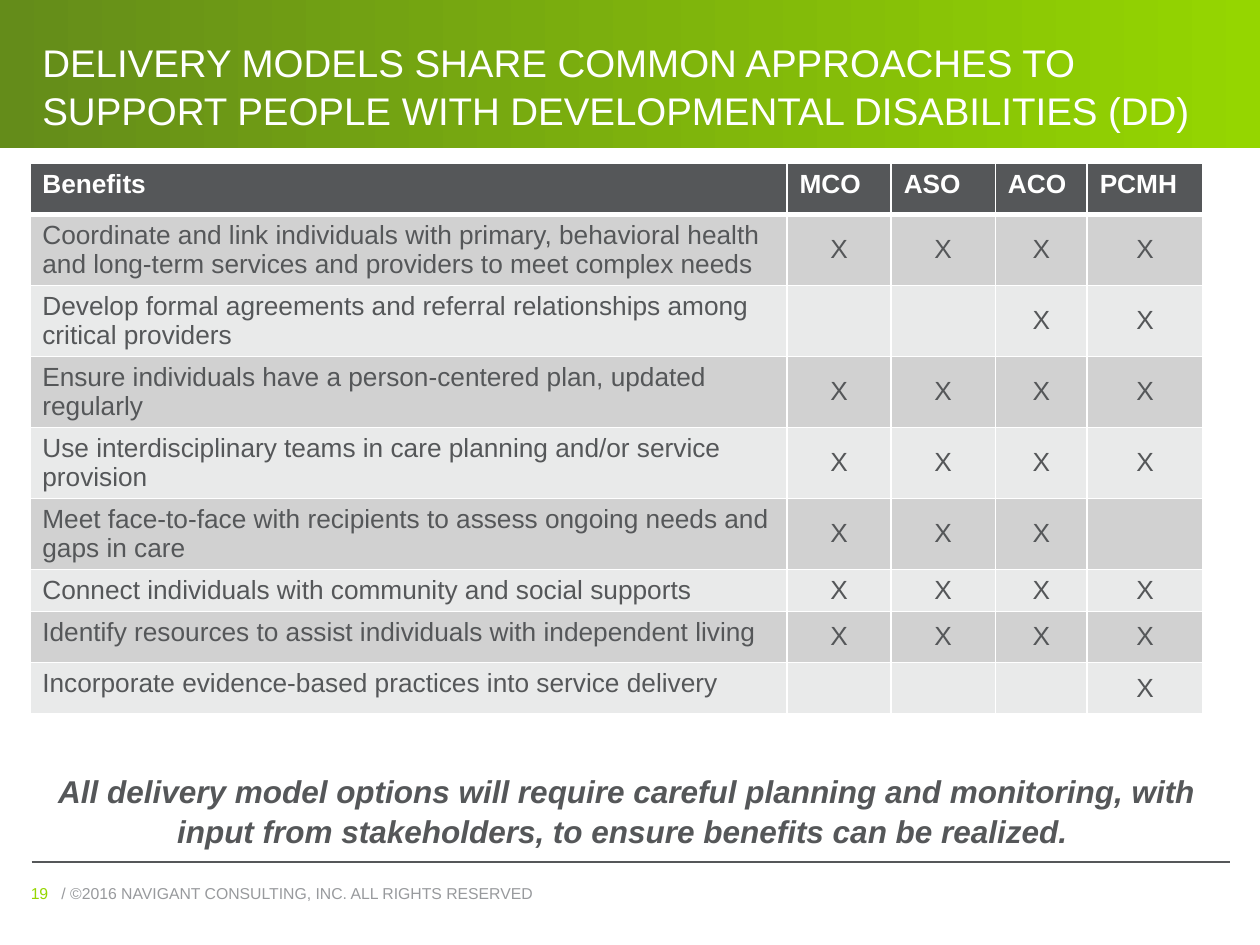
from dataclasses import dataclass

from lxml.etree import SubElement
from pptx import Presentation
from pptx.dml.color import RGBColor
from pptx.enum.shapes import MSO_CONNECTOR, MSO_SHAPE
from pptx.enum.text import MSO_ANCHOR, MSO_AUTO_SIZE, PP_ALIGN
from pptx.oxml.ns import qn
from pptx.util import Pt


@dataclass(frozen=True)
class Theme:
    font: str = "Arial"
    white: str = "FFFFFF"
    ink: str = "555759"
    footer: str = "989A9D"
    green: str = "95D600"
    dark_green: str = "648C1A"
    band_odd: str = "D1D1D1"
    band_even: str = "E9EAEA"
    title_size: int = 22
    statement_size: int = 18
    table_size: int = 15
    footer_size: int = 9


theme = Theme()


def write(paragraph, text, size, color, bold=False, italic=False):
    run = paragraph.add_run()
    run.text = text
    run.font.name = theme.font
    run.font.size = Pt(size)
    run.font.color.rgb = RGBColor.from_string(color)
    run.font.bold = bold
    run.font.italic = italic


def style_cell(cell, fill, bottom=1, top=1):
    """Give a cell white borders, in points, and a solid fill."""
    properties = cell._tc.get_or_add_tcPr()
    for side, width in (("L", 1), ("R", 1), ("T", top), ("B", bottom)):
        border = SubElement(properties, qn(f"a:ln{side}"), w=str(Pt(width)))
        solid = SubElement(border, qn("a:solidFill"))
        SubElement(solid, qn("a:srgbClr"), val=theme.white)
    cell.fill.solid()
    cell.fill.fore_color.rgb = RGBColor.from_string(fill)


presentation = Presentation()
presentation.slide_width, presentation.slide_height = Pt(720), Pt(540)
slide = presentation.slides.add_slide(presentation.slide_layouts[5])
shapes = slide.shapes

# Title on its gradient band
title = shapes.title
band = shapes.add_shape(MSO_SHAPE.RECTANGLE, 0, 0, Pt(720), Pt(84.5))
band.shadow.inherit = False
band.line.fill.background()
band.fill.gradient()
band.fill.gradient_angle = 0
for stop, color in zip(band.fill.gradient_stops, (theme.dark_green, theme.green)):
    stop.color.rgb = RGBColor.from_string(color)
title._element.addprevious(band._element)

title.left, title.top, title.width, title.height = Pt(17), Pt(0), Pt(686), Pt(80)
title.text_frame.auto_size = MSO_AUTO_SIZE.NONE
title.text_frame.vertical_anchor = MSO_ANCHOR.BOTTOM
paragraph = title.text_frame.paragraphs[0]
paragraph.alignment = PP_ALIGN.LEFT
paragraph.line_spacing = 1.05
write(paragraph, "DELIVERY MODELS SHARE COMMON APPROACHES TO SUPPORT PEOPLE WITH "
      "DEVELOPMENTAL DISABILITIES (DD)", theme.title_size, theme.white)

# Benefits by delivery model
models = ["MCO", "ASO", "ACO", "PCMH"]
benefits = [
    ("Coordinate and link individuals with primary, behavioral health and "
     "long-term services and providers to meet complex needs", models, 40.5),
    ("Develop formal agreements and referral relationships among critical providers",
     ["ACO", "PCMH"], 40.5),
    ("Ensure individuals have a person-centered plan, updated regularly", models, 40.5),
    ("Use interdisciplinary teams in care planning and/or service provision", models, 40.5),
    ("Meet face-to-face with recipients to assess ongoing needs and gaps in care",
     ["MCO", "ASO", "ACO"], 40.5),
    ("Connect individuals with community and social supports", models, 24),
    ("Identify resources to assist individuals with independent living", models, 29.25),
    ("Incorporate evidence-based practices into service delivery", ["PCMH"], 29.25),
]
column_widths = [432.75, 59.5, 59.5, 52.5, 66.25]
row_heights = [29] + [height for _, _, height in benefits]

table = shapes.add_table(len(row_heights), len(column_widths), Pt(17), Pt(93.5),
                         Pt(sum(column_widths)), Pt(sum(row_heights))).table
for column, width in zip(table.columns, column_widths):
    column.width = Pt(width)
for row, height in zip(table.rows, row_heights):
    row.height = Pt(height)

for index, heading in enumerate(["Benefits"] + models):
    cell = table.cell(0, index)
    style_cell(cell, theme.ink, bottom=3)
    write(cell.text_frame.paragraphs[0], heading, theme.table_size, theme.white, bold=True)

for row, (benefit, offered_by, _) in enumerate(benefits, start=1):
    fill = theme.band_odd if row % 2 else theme.band_even
    top = 3 if row == 1 else 1
    cell = table.cell(row, 0)
    style_cell(cell, fill, top=top)
    write(cell.text_frame.paragraphs[0], benefit, theme.table_size, theme.ink)
    for column, model in enumerate(models, start=1):
        cell = table.cell(row, column)
        style_cell(cell, fill, top=top)
        if model in offered_by:
            cell.vertical_anchor = MSO_ANCHOR.MIDDLE
            paragraph = cell.text_frame.paragraphs[0]
            paragraph.alignment = PP_ALIGN.CENTER
            write(paragraph, "X", theme.table_size, theme.ink)

# Closing statement
statement = shapes.add_textbox(Pt(14.5), Pt(440), Pt(687.5), Pt(46)).text_frame
statement.word_wrap = True
statement.margin_left = statement.margin_right = 0
statement.margin_top = statement.margin_bottom = 0
paragraph = statement.paragraphs[0]
paragraph.alignment = PP_ALIGN.CENTER
paragraph.line_spacing = 1.05
write(paragraph, "All delivery model options will require careful planning and monitoring, "
      "with input from stakeholders, to ensure benefits can be realized. ",
      theme.statement_size, theme.ink, bold=True, italic=True)

# Footer
rule = shapes.add_connector(MSO_CONNECTOR.STRAIGHT, Pt(18), Pt(492.5), Pt(703), Pt(492.5))
rule.line.color.rgb = RGBColor.from_string(theme.ink)
rule.line.width = Pt(0.75)
SubElement(rule._element.spPr, qn("a:effectLst"))

for left, width, text, color in (
    (28, 459, "/ ©2016 NAVIGANT CONSULTING, INC. ALL RIGHTS RESERVED", theme.footer),
    (10.5, 49, "19", theme.green),
):
    footer = shapes.add_textbox(Pt(left), Pt(501.5), Pt(width), Pt(16.5)).text_frame
    footer.word_wrap = True
    write(footer.paragraphs[0], text, theme.footer_size, color)

presentation.save("out.pptx")
